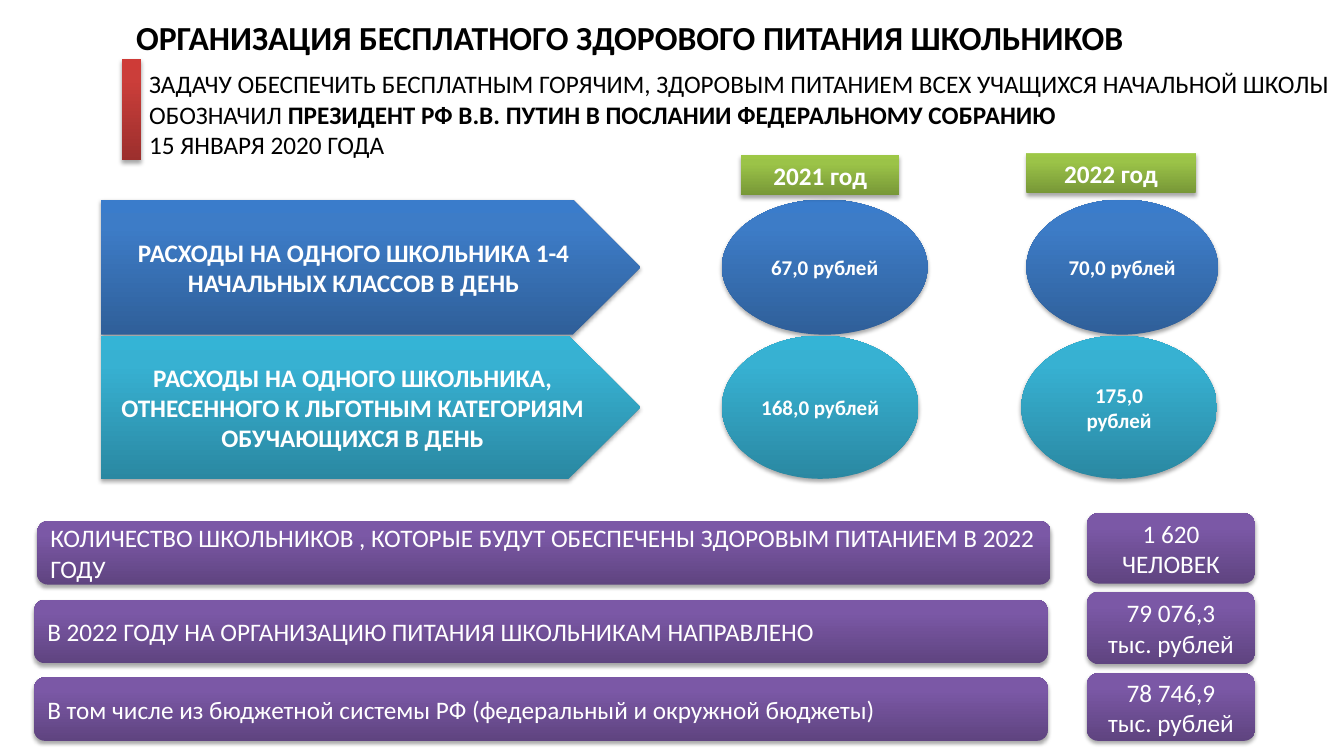
from dataclasses import dataclass

from lxml import etree
from pptx import Presentation
from pptx import util as u
from pptx.dml.color import RGBColor
from pptx.enum import shapes, text
from pptx.oxml import ns


@dataclass(frozen=True)
class Theme:
    """Colours, font and type sizes of the slide."""
    font: str = "Calibri"
    title: int = 24
    body: int = 18
    value: int = 15
    dark: str = "000000"
    light: str = "FFFFFF"
    blue: tuple = ("2F5F99", "3D7CC7", "3A7CCB")
    teal: tuple = ("2A88A2", "37B1D2", "34B4D6")
    green: tuple = ("779737", "9BC348", "9DC746")
    purple: tuple = ("5F4480", "7B58A6", "7C57A8")
    red: tuple = ("9C2F2D", "CB3E3A", "CE3B37")


THEME = Theme()
SHAPE = shapes.MSO_SHAPE
CENTER, LEFT = text.PP_ALIGN.CENTER, text.PP_ALIGN.LEFT
MIDDLE, TOP = text.MSO_ANCHOR.MIDDLE, text.MSO_ANCHOR.TOP


def add_node(parent, tag, **attributes):
    """Append a DrawingML element and return it."""
    node = etree.SubElement(parent, ns.qn(tag))
    for name, value in attributes.items():
        node.set(name, str(value))
    return node


def style_gradient(shape, colours):
    """Fill a shape with a bottom-to-top gradient."""
    shape.fill.gradient()
    shape.fill.gradient_angle = 90
    stops = shape._element.spPr.find(ns.qn("a:gradFill")).find(ns.qn("a:gsLst"))
    for stop in list(stops):
        stops.remove(stop)
    for position, colour in zip((0, 80, 100), colours):
        stop = add_node(stops, "a:gs", pos=position * 1000)
        add_node(stop, "a:srgbClr", val=colour)


def style_shadow(shape):
    """Give a shape a soft shadow below it."""
    shape.shadow.inherit = False
    effects = shape._element.spPr.find(ns.qn("a:effectLst"))
    shadow = add_node(effects, "a:outerShdw", blurRad=u.Pt(3.1), dist=u.Pt(1.8),
                      dir=5400000, rotWithShape=0)
    colour = add_node(shadow, "a:srgbClr", val=THEME.dark)
    add_node(colour, "a:alpha", val=35000)


def style_paragraph(paragraph, size, colour, bold, align):
    """Set the font and alignment of a paragraph."""
    paragraph.alignment = align
    font = paragraph.font
    font.name, font.size, font.bold = THEME.font, u.Pt(size), bold
    font.color.rgb = RGBColor.from_string(colour)


def add_block(slide, kind, box, colours, lines=(), size=THEME.body, bold=False,
              align=CENTER, anchor=MIDDLE):
    """Add a shaded shape with its lines of text."""
    shape = slide.shapes.add_shape(kind, *map(u.Inches, box))
    style_gradient(shape, colours)
    style_shadow(shape)
    shape.line.fill.background()
    frame = shape.text_frame
    frame.word_wrap, frame.vertical_anchor = True, anchor
    for index, line in enumerate(lines):
        paragraph = frame.add_paragraph() if index else frame.paragraphs[0]
        paragraph.text = line
        style_paragraph(paragraph, size, THEME.light, bold, align)
    return shape


def add_title(slide, box, wording):
    """Place and format the title placeholder."""
    title = slide.shapes.title
    title.left, title.top, title.width, title.height = map(u.Inches, box)
    frame = title.text_frame
    frame.text = wording
    frame.auto_size = text.MSO_AUTO_SIZE.NONE
    frame.vertical_anchor = MIDDLE
    style_paragraph(frame.paragraphs[0], THEME.title, THEME.dark, True, LEFT)


def add_intro(slide, box, paragraphs):
    """Add the introduction with a red bar on its left."""
    left, top, width, height = box
    intro = slide.shapes.add_shape(SHAPE.RECTANGLE, *map(u.Inches, box))
    intro.shadow.inherit = False
    intro.fill.solid()
    intro.fill.fore_color.rgb = RGBColor.from_string(THEME.light)
    intro.line.fill.background()
    frame = intro.text_frame
    frame.word_wrap, frame.vertical_anchor = True, MIDDLE
    frame.margin_left = frame.margin_right = u.Inches(0.08)
    frame.margin_top = frame.margin_bottom = u.Inches(0.04)
    for index, runs in enumerate(paragraphs):
        paragraph = frame.add_paragraph() if index else frame.paragraphs[0]
        style_paragraph(paragraph, THEME.body, THEME.dark, False, LEFT)
        for wording, bold in runs:
            run = paragraph.add_run()
            run.text, run.font.bold = wording, bold
    add_block(slide, SHAPE.RECTANGLE, (left - 0.19, top - 0.15, 0.19, 1), THEME.red)


def add_cost_row(slide, box, colours, label, values):
    """Add an arrow label and the yearly values in ellipses."""
    left, top, width, height = box
    add_block(slide, SHAPE.PENTAGON, box, colours, [label], bold=True)
    for offset, value_width, lines in values:
        add_block(slide, SHAPE.OVAL, (left + offset, top, value_width, height),
                  colours, lines, THEME.value, True)


def add_year(slide, box, year):
    """Add a year heading."""
    add_block(slide, SHAPE.RECTANGLE, box, THEME.green, [year], bold=True, anchor=TOP)


def add_total_row(slide, box, label, value_top, value_height, value):
    """Add a wide label and the total to its right."""
    add_block(slide, SHAPE.ROUNDED_RECTANGLE, box, THEME.purple, [label], align=LEFT)
    value_box = (10.78, value_top, 1.67, value_height)
    add_block(slide, SHAPE.ROUNDED_RECTANGLE, value_box, THEME.purple, value)


def main():
    """Build and save the slide."""
    presentation = Presentation()
    presentation.slide_width, presentation.slide_height = u.Inches(13.33), u.Inches(7.5)
    slide = presentation.slides.add_slide(presentation.slide_layouts[5])

    add_title(slide, (1.25, 0, 12, 0.73),
              "ОРГАНИЗАЦИЯ БЕСПЛАТНОГО ЗДОРОВОГО ПИТАНИЯ ШКОЛЬНИКОВ")
    add_cost_row(slide, (1, 1.98, 5.35, 1.34), THEME.blue,
                 "РАСХОДЫ НА ОДНОГО ШКОЛЬНИКА 1-4 НАЧАЛЬНЫХ КЛАССОВ В ДЕНЬ",
                 [(6.16, 2.04, ["67,0 рублей"]), (9.18, 1.9, ["70,0 рублей"])])
    add_cost_row(slide, (1, 3.33, 5.35, 1.42), THEME.teal,
                 "РАСХОДЫ НА ОДНОГО ШКОЛЬНИКА, ОТНЕСЕННОГО К ЛЬГОТНЫМ КАТЕГОРИЯМ "
                 "ОБУЧАЮЩИХСЯ В ДЕНЬ",
                 [(6.16, 1.95, ["168,0 рублей"]), (9.13, 1.94, ["175,0", "рублей"])])
    add_year(slide, (7.35, 1.54, 1.57, 0.4), "2021 год")
    add_year(slide, (10.18, 1.52, 1.68, 0.4), "2022 год")
    add_intro(slide, (1.4, 0.74, 11.89, 0.78), [
        [("ЗАДАЧУ ОБЕСПЕЧИТЬ БЕСПЛАТНЫМ ГОРЯЧИМ, ЗДОРОВЫМ ПИТАНИЕМ ВСЕХ УЧАЩИХСЯ "
          "НАЧАЛЬНОЙ ШКОЛЫ ОБОЗНАЧИЛ ", False),
         ("ПРЕЗИДЕНТ РФ В.В. ПУТИН В ПОСЛАНИИ ФЕДЕРАЛЬНОМУ СОБРАНИЮ", True)],
        [("15 ЯНВАРЯ 2020 ГОДА", False)]])

    totals = [
        (0.37, 5.17, "КОЛИЧЕСТВО ШКОЛЬНИКОВ , КОТОРЫЕ БУДУТ ОБЕСПЕЧЕНЫ ЗДОРОВЫМ "
         "ПИТАНИЕМ В 2022 ГОДУ", 5.09, 0.7, ["1 620 ЧЕЛОВЕК"]),
        (0.34, 5.95, "В 2022 ГОДУ НА ОРГАНИЗАЦИЮ ПИТАНИЯ ШКОЛЬНИКАМ НАПРАВЛЕНО",
         5.87, 0.72, ["79 076,3", "тыс. рублей"]),
        (0.34, 6.72, "В том числе из бюджетной системы РФ (федеральный и окружной бюджеты)",
         6.68, 0.67, ["78 746,9", "тыс. рублей"]),
    ]
    for left, top, label, value_top, value_height, value in totals:
        add_total_row(slide, (left, top, 10.05, 0.63), label,
                      value_top, value_height, value)
    presentation.save("out.pptx")


if __name__ == "__main__":
    main()
